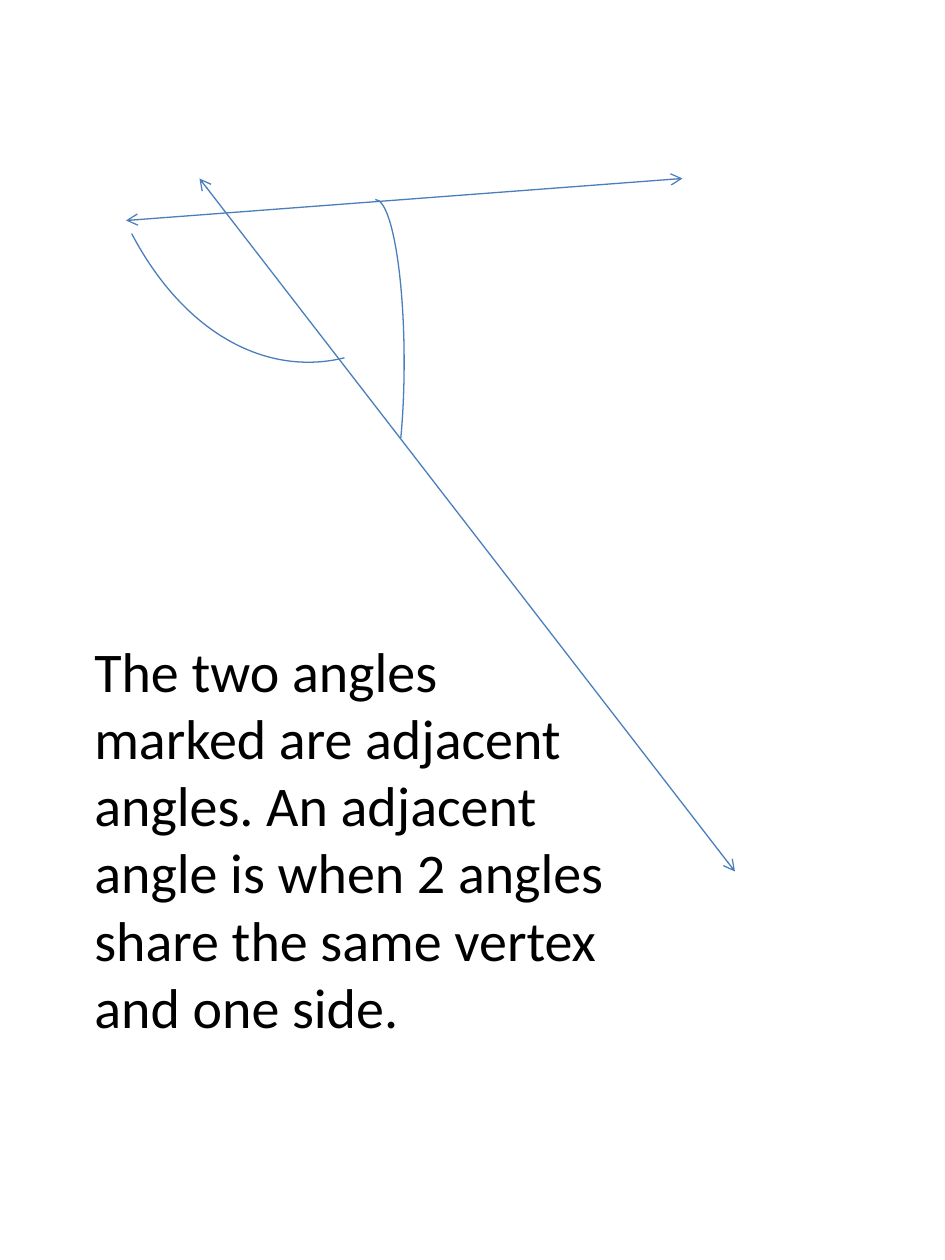
from lxml.etree import SubElement
from pptx import Presentation
from pptx.dml.color import RGBColor
from pptx.enum.shapes import MSO_CONNECTOR, MSO_SHAPE
from pptx.enum.text import MSO_AUTO_SIZE
from pptx.oxml.ns import qn
from pptx.util import Inches, Pt

COLORS = {"line": "4B7EBC", "text": "000000"}
WIDTH, HEIGHT = 7.5, 10
CELLS_PER_INCH = 12  # grid of 90 columns by 120 rows
DEFINITION = (
    "The two angles marked are adjacent angles. An adjacent angle is when "
    "2 angles share the same vertex and one side."
)


def grid(*cells):
    return [Inches(cell / CELLS_PER_INCH) for cell in cells]


def style_line(line):
    line.color.rgb = RGBColor.from_string(COLORS["line"])
    line.width = Pt(0.75)


def add_ray_line(slide, start, end):
    """Straight line with an open arrowhead at both ends."""
    ray_line = slide.shapes.add_connector(
        MSO_CONNECTOR.STRAIGHT, *grid(*start, *end)
    )
    style_line(ray_line.line)
    properties = ray_line._element.spPr
    outline = properties.find(qn("a:ln"))
    for end_tag in ("a:headEnd", "a:tailEnd"):
        SubElement(outline, qn(end_tag), type="arrow")
    SubElement(properties, qn("a:effectLst"))


def add_angle_mark(slide, box, start_degrees, end_degrees):
    """Arc running clockwise between two angles in degrees."""
    mark = slide.shapes.add_shape(MSO_SHAPE.ARC, *grid(*box))
    # An adjustment of 1 stands for 100000 units; a degree has 60000
    mark.adjustments[0] = start_degrees * 0.6
    mark.adjustments[1] = end_degrees * 0.6
    mark.shadow.inherit = False
    mark.fill.background()
    style_line(mark.line)


def add_definition(slide, box):
    definition = slide.shapes.add_textbox(*grid(*box))
    frame = definition.text_frame
    frame.word_wrap = True
    frame.auto_size = MSO_AUTO_SIZE.SHAPE_TO_FIT_TEXT
    run = frame.paragraphs[0].add_run()
    run.text = DEFINITION
    run.font.name = "Calibri"
    run.font.size = Pt(32)
    run.font.color.rgb = RGBColor.from_string(COLORS["text"])


def main():
    deck = Presentation()
    deck.slide_width, deck.slide_height = Inches(WIDTH), Inches(HEIGHT)
    slide = deck.slides.add_slide(deck.slide_layouts[6])

    # Two crossing lines
    add_ray_line(slide, (19, 17), (70, 83))
    add_ray_line(slide, (65, 17), (12, 21))

    # Marks of the two adjacent angles
    add_angle_mark(slide, (33, 19, 5.5, 31), 270, 71.32)
    add_angle_mark(slide, (8, -29.5, 42.7, 64), 83.75, 130.38)

    # Explanation below the figure
    add_definition(slide, (7.8, 60, 51, 40))

    deck.save("out.pptx")


if __name__ == "__main__":
    main()
